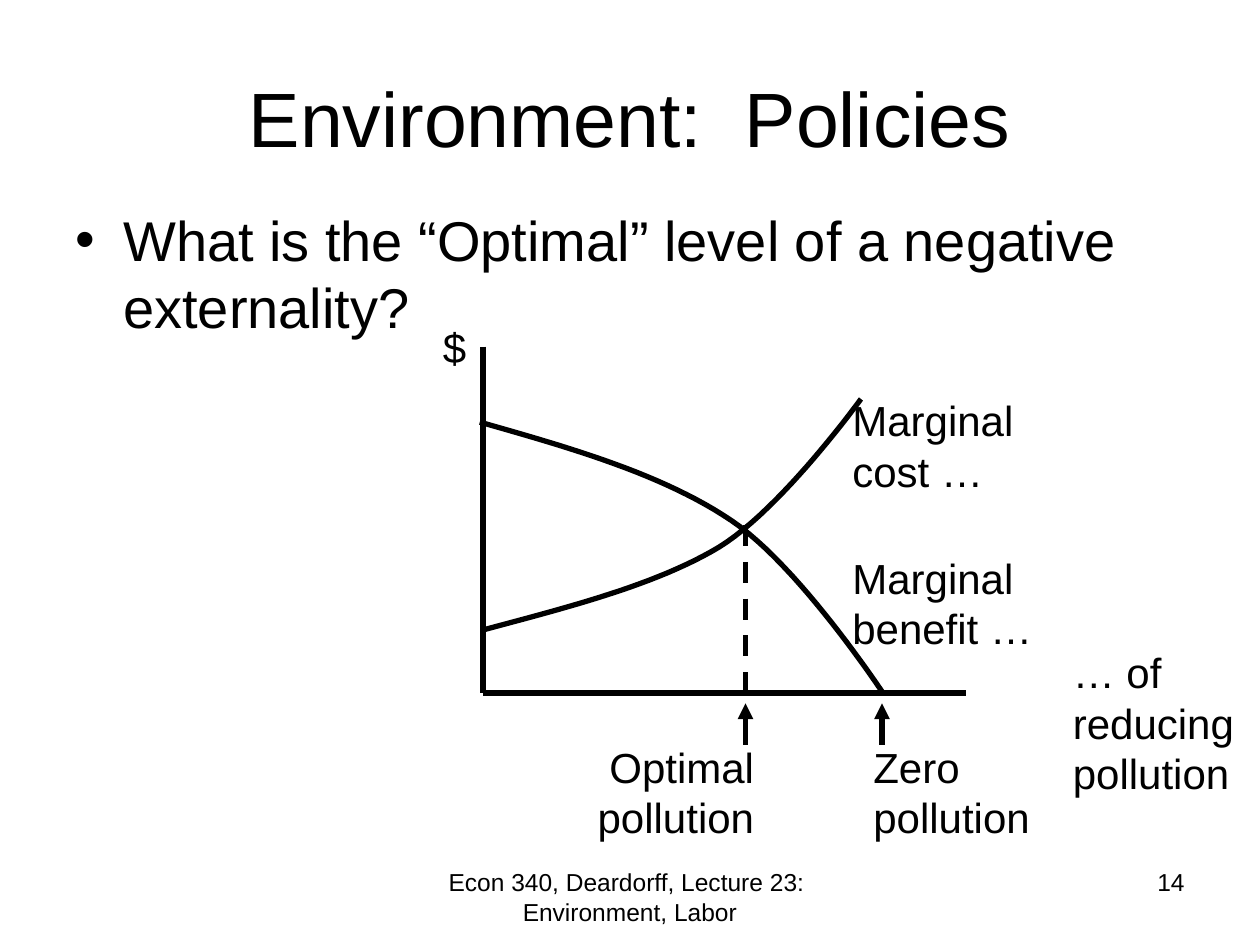
from lxml.etree import SubElement
from pptx import Presentation
from pptx.dml.color import RGBColor
from pptx.enum.dml import MSO_LINE
from pptx.enum.shapes import MSO_CONNECTOR
from pptx.enum.text import MSO_ANCHOR, MSO_AUTO_SIZE, PP_ALIGN
from pptx.oxml.ns import qn
from pptx.util import Inches, Pt

TITLE_ONLY = 5
CURVE_STEPS = 24


def grid(units):
    """Length on a grid of 120 columns by 90 rows, twelve to the inch."""
    return Inches(units / 12)


def color(hex_string):
    return RGBColor.from_string(hex_string)


def bezier(start, first, second, end):
    """Points along a cubic curve, without its start."""
    for step in range(1, CURVE_STEPS + 1):
        t = step / CURVE_STEPS
        u = 1 - t
        yield tuple(u**3 * a + 3 * u * u * t * b + 3 * u * t * t * c + t**3 * d
                    for a, b, c, d in zip(start, first, second, end))


class Board:
    """The current slide and the style of its elements."""
    font = "Arial"
    ink = "000000"
    line_width = Pt(3)

    def __init__(self, slide):
        self.slide = slide

    def fill_text(self, box, text, size, align):
        frame = box.text_frame
        frame.word_wrap = True
        frame.text = text
        para = frame.paragraphs[0]
        para.alignment = align
        for span in para.runs:
            span.font.name = self.font
            span.font.size = Pt(size)
            span.font.color.rgb = color(self.ink)
        return para

    def title(self, text, left, top, width, height):
        box = self.slide.shapes.title
        box.left, box.top = grid(left), grid(top)
        box.width, box.height = grid(width), grid(height)
        self.fill_text(box, text, 44, PP_ALIGN.CENTER)
        box.text_frame.auto_size = MSO_AUTO_SIZE.NONE
        box.text_frame.vertical_anchor = MSO_ANCHOR.MIDDLE

    def text(self, text, left, top, width, height, size=24, align=PP_ALIGN.LEFT):
        box = self.slide.shapes.add_textbox(grid(left), grid(top), grid(width), grid(height))
        return self.fill_text(box, text, size, align)

    def bullet(self, text, left, top, width, height):
        para = self.text(text, left, top, width, height, size=32)
        para.space_before = Pt(6.4)
        properties = para._p.get_or_add_pPr()
        properties.set("marL", str(Inches(0.38)))
        properties.set("indent", str(Inches(-0.38)))
        SubElement(properties, qn("a:buFont"), typeface=self.font)
        SubElement(properties, qn("a:buChar"), char="•")

    def stroke(self, shape):
        shape.line.color.rgb = color(self.ink)
        shape.line.width = self.line_width

    def line(self, start, end, dashed=False, arrow=False):
        connector = self.slide.shapes.add_connector(
            MSO_CONNECTOR.STRAIGHT, *map(grid, start + end))
        self.stroke(connector)
        if dashed:
            connector.line.dash_style = MSO_LINE.DASH
        properties = connector.element.spPr
        if arrow:
            SubElement(properties.find(qn("a:ln")), qn("a:headEnd"), type="triangle")
        SubElement(properties, qn("a:effectLst"))

    def curve(self, start, *segments):
        points = [start]
        for segment in segments:
            points.extend(bezier(points[-1], *segment))
        places = [(grid(x), grid(y)) for x, y in points]
        builder = self.slide.shapes.build_freeform(*places[0])
        builder.add_line_segments(places[1:], close=False)
        shape = builder.convert_to_shape()
        shape.fill.background()
        shape.shadow.inherit = False
        self.stroke(shape)


def main():
    deck = Presentation()
    deck.slide_width, deck.slide_height = grid(120), grid(90)
    page = deck.slides.add_slide(deck.slide_layouts[TITLE_ONLY])
    board = Board(page)

    # Footer and page number
    board.text("Econ 340, Deardorff, Lecture 23:  Environment, Labor",
               41, 82, 38, 6.25, size=14, align=PP_ALIGN.CENTER)
    board.text("14", 86, 82, 28, 6.25, size=14, align=PP_ALIGN.RIGHT)

    # Title and question
    board.title("Environment:  Policies", 6, 3.6, 108, 15)
    board.bullet("What is the “Optimal” level of a negative externality?", 6, 19, 108, 62)

    # Axes
    origin_x, base = 46, 66
    optimal_x, zero_x = 71, 84
    board.line((origin_x, 33), (origin_x, base))
    board.line((92, base), (origin_x, base))

    # Marginal benefit, then marginal cost
    board.curve((45.7, 40.2),
                ((54.5, 42.7), (63.2, 45.2), (69.7, 49.6)),
                ((76.1, 53.9), (84.1, base), (84.1, base)))
    board.curve((origin_x, 60),
                ((54.2, 57.8), (62.5, 55.7), (68.5, 52.1)),
                ((74.5, 48.4), (82, 38), (82, 38)))
    board.line((optimal_x, 50), (optimal_x, base), dashed=True)

    # Labels
    board.text("$", 41, 30, 14, 6)
    board.text("Zero pollution", 82, 70, 24, 11)
    board.text("Optimal pollution", 49, 70, 24, 11, align=PP_ALIGN.RIGHT)
    board.text("Marginal benefit …", 80, 52, 24, 11)
    board.text("Marginal cost …", 80, 37, 24, 11)
    board.text("… of reducing pollution", 101, 61, 19, 15.7)

    # Arrows up to the axis
    for x in (optimal_x, zero_x):
        board.line((x, 67), (x, 71), arrow=True)

    deck.save("out.pptx")


if __name__ == "__main__":
    main()
